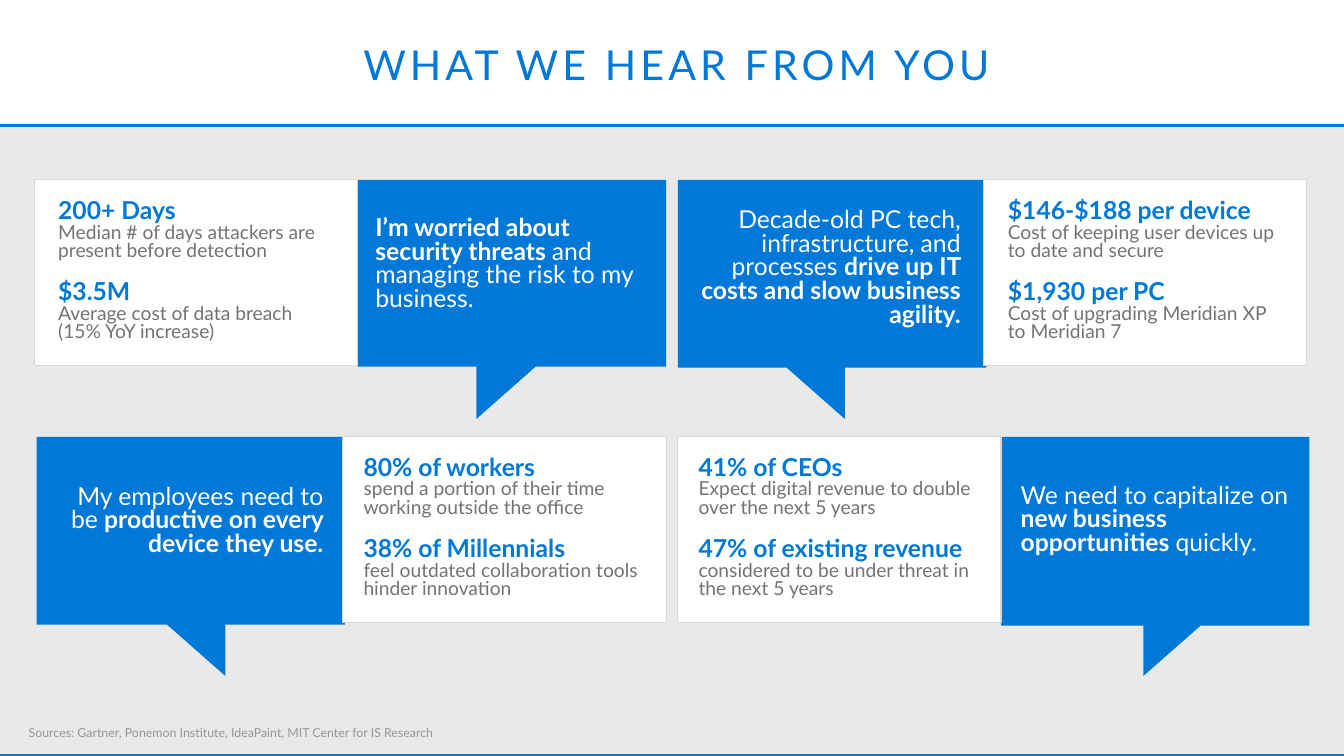
from pptx import Presentation
from pptx.dml.color import RGBColor
from pptx.enum.shapes import MSO_SHAPE
from pptx.enum.text import MSO_ANCHOR, PP_ALIGN
from pptx.util import Inches, Pt

RECTANGLE = MSO_SHAPE.RECTANGLE
MIDDLE = MSO_ANCHOR.MIDDLE
LEFT, CENTER, RIGHT = PP_ALIGN.LEFT, PP_ALIGN.CENTER, PP_ALIGN.RIGHT

BLUE, WHITE, GRAY = "0078D7", "FFFFFF", "737373"
PAGE_WIDTH, PAGE_HEIGHT = 13.6, 7.65
BAND_TOP = 1.26
TOP_ROW, BOTTOM_ROW = 1.82, 4.42
PANEL_WIDTH, PANEL_HEIGHT = 3.27, 1.88
STAT_OFFSETS = (0.16, 0.98)


def paint(shape, fill, line=None):
    """Give a shape a flat fill and an optional thin outline."""
    shape.shadow.inherit = False
    shape.fill.solid()
    shape.fill.fore_color.rgb = RGBColor.from_string(fill)
    if line:
        shape.line.color.rgb = RGBColor.from_string(line)
        shape.line.width = Pt(0.75)
    else:
        shape.line.fill.background()


def add_text(left, top, width, height, paragraphs, align=LEFT, spacing=0.8):
    """Add a text box; each paragraph is a list of (text, size, colour, bold) runs."""
    box = slide.shapes.add_textbox(Inches(left), Inches(top), Inches(width), Inches(height))
    frame = box.text_frame
    frame.word_wrap = True
    for index, runs in enumerate(paragraphs):
        paragraph = frame.paragraphs[0] if index == 0 else frame.add_paragraph()
        paragraph.alignment = align
        paragraph.line_spacing = spacing
        for text, size, color, bold in runs:
            run = paragraph.add_run()
            run.text = text
            run.font.name = "Lato"
            run.font.size = Pt(size)
            run.font.bold = bold
            run.font.color.rgb = RGBColor.from_string(color)
    return frame


presentation = Presentation()
presentation.slide_width = Inches(PAGE_WIDTH)
presentation.slide_height = Inches(PAGE_HEIGHT)
slide = presentation.slides.add_slide(presentation.slide_layouts[6])

# Background band and its two rules
band = slide.shapes.add_shape(
    RECTANGLE, 0, Inches(BAND_TOP), Inches(PAGE_WIDTH), Inches(PAGE_HEIGHT - BAND_TOP))
paint(band, "E9E9E9")
for rule_top in (BAND_TOP, 7.63):
    rule = slide.shapes.add_shape(
        RECTANGLE, 0, Inches(rule_top), Inches(PAGE_WIDTH), Inches(0.02))
    paint(rule, BLUE, BLUE)

# Title and sources
title = add_text(3.37, 0.28, 6.96, 0.79,
                 [[("WHAT WE HEAR FROM YOU", 30, BLUE, False)]], CENTER, 0.9)
title.vertical_anchor = MIDDLE
title.margin_left = title.margin_right = Inches(0.16)
title.margin_top = title.margin_bottom = Inches(0.1)
title.paragraphs[0].space_after = Pt(6)
title.paragraphs[0].runs[0].font._element.set("spc", "300")

sources = add_text(
    0.29, 7.35, 10.61, 0.14,
    [[("Sources: Gartner, Ponemon Institute, IdeaPaint, MIT Center for IS Research",
       9, "969696", False)]], spacing=0.9)
sources.margin_left = sources.margin_right = 0
sources.margin_top = sources.margin_bottom = 0

# Speech bubbles: left, right, top, bottom, tail (right root, tip, left root), tip height,
# then the quote box, its alignment and its (text, bold) runs
bubbles = [
    (3.62, 6.74, TOP_ROW, 3.71, (5.42, 4.82, 4.82), 4.24, (3.7, 2.15, 3.09, 1.07), LEFT,
     [("I’m worried about security threats ", True),
      ("and managing the risk to my business.", False)]),
    (6.86, 9.98, TOP_ROW, 3.72, (8.55, 8.55, 7.96), 4.24, (6.9, 2.07, 2.92, 1.31), RIGHT,
     [("Decade-old PC tech, infrastructure, and processes ", False),
      ("drive up IT costs and slow business agility.", True)]),
    (0.37, 3.49, BOTTOM_ROW, 6.32, (2.28, 2.28, 1.69), 6.84, (0.45, 4.87, 2.92, 0.83), RIGHT,
     [("My employees need to be ", False),
      ("productive on every device they use.", True)]),
    (10.13, 13.25, BOTTOM_ROW, 6.33, (12.15, 11.57, 11.57), 6.84, (10.23, 4.86, 3.09, 0.83), LEFT,
     [("We need to capitalize on ", False),
      ("new business opportunities ", True),
      ("quickly.", False)]),
]
for left, right, top, bottom, tail, tip_height, quote_box, align, quote in bubbles:
    tail_right, tip, tail_left = tail
    corners = [(right, top), (right, bottom), (tail_right, bottom), (tip, tip_height),
               (tail_left, bottom), (left, bottom)]
    builder = slide.shapes.build_freeform(Inches(left), Inches(top))
    builder.add_line_segments([(Inches(x), Inches(y)) for x, y in corners], close=True)
    paint(builder.convert_to_shape(), BLUE)
    add_text(*quote_box, [[(text, 18, WHITE, bold) for text, bold in quote]], align)

# Statistic panels: left, top, text left, text width, (figure, explanation) pairs
panels = [
    (0.35, TOP_ROW, 0.49, 2.9,
     [("200+ Days", "Median # of days attackers are present before detection"),
      ("$3.5M", "Average cost of data breach (15% YoY increase)")]),
    (9.95, TOP_ROW, 10.1, 3.02,
     [("$146-$188 per device", "Cost of keeping user devices up to date and secure"),
      ("$1,930 per PC", "Cost of upgrading Meridian XP to Meridian 7")]),
    (3.47, BOTTOM_ROW, 3.58, 3.02,
     [("80% of workers", "spend a portion of their time working outside the office"),
      ("38% of Millennials", "feel outdated collaboration tools hinder innovation")]),
    (6.86, BOTTOM_ROW, 6.97, 3.02,
     [("41% of CEOs", "Expect digital revenue to double over the next 5 years"),
      ("47% of existing revenue", "considered to be under threat in the next 5 years")]),
]
for left, top, text_left, text_width, statistics in panels:
    panel = slide.shapes.add_shape(
        RECTANGLE, Inches(left), Inches(top), Inches(PANEL_WIDTH), Inches(PANEL_HEIGHT))
    paint(panel, WHITE, "D7D7D7")
    for offset, (figure, explanation) in zip(STAT_OFFSETS, statistics):
        add_text(text_left, top + offset, text_width, 0.72,
                 [[(figure, 18, BLUE, True)], [(explanation, 14, GRAY, False)]])

presentation.save("out.pptx")
